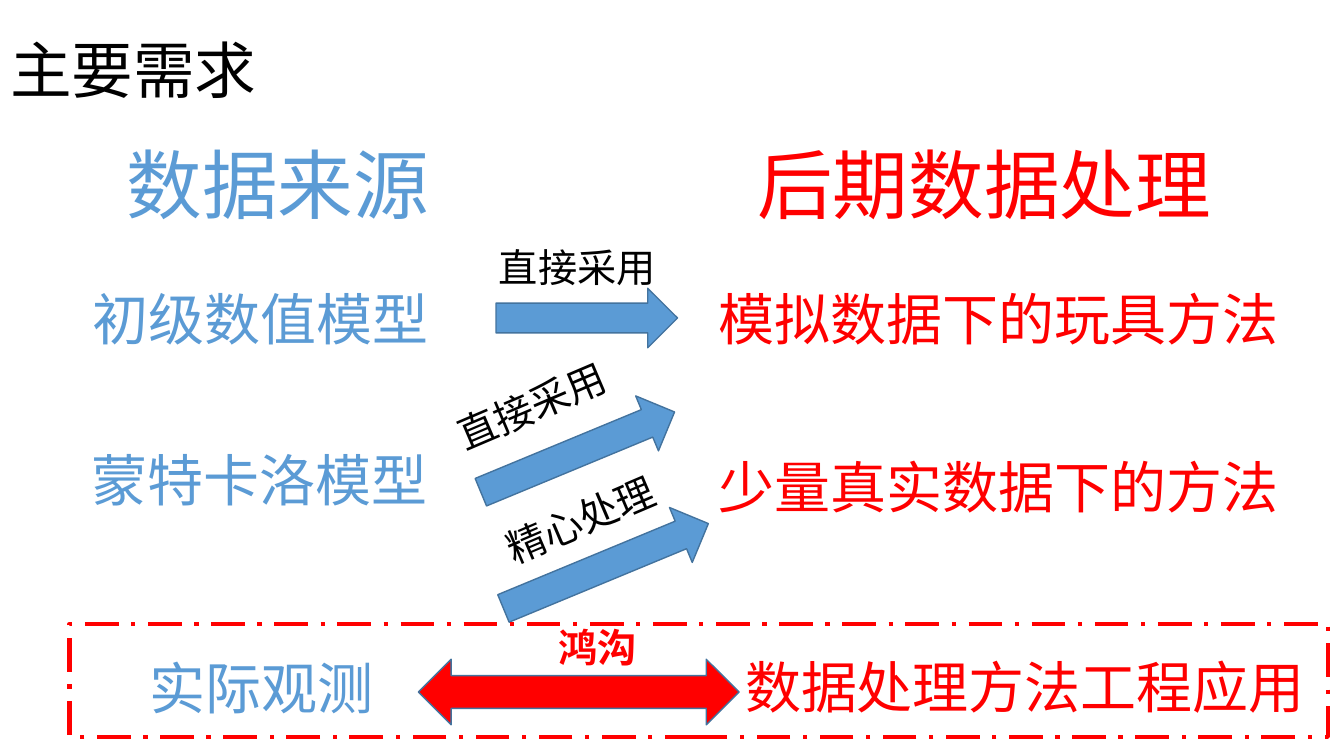
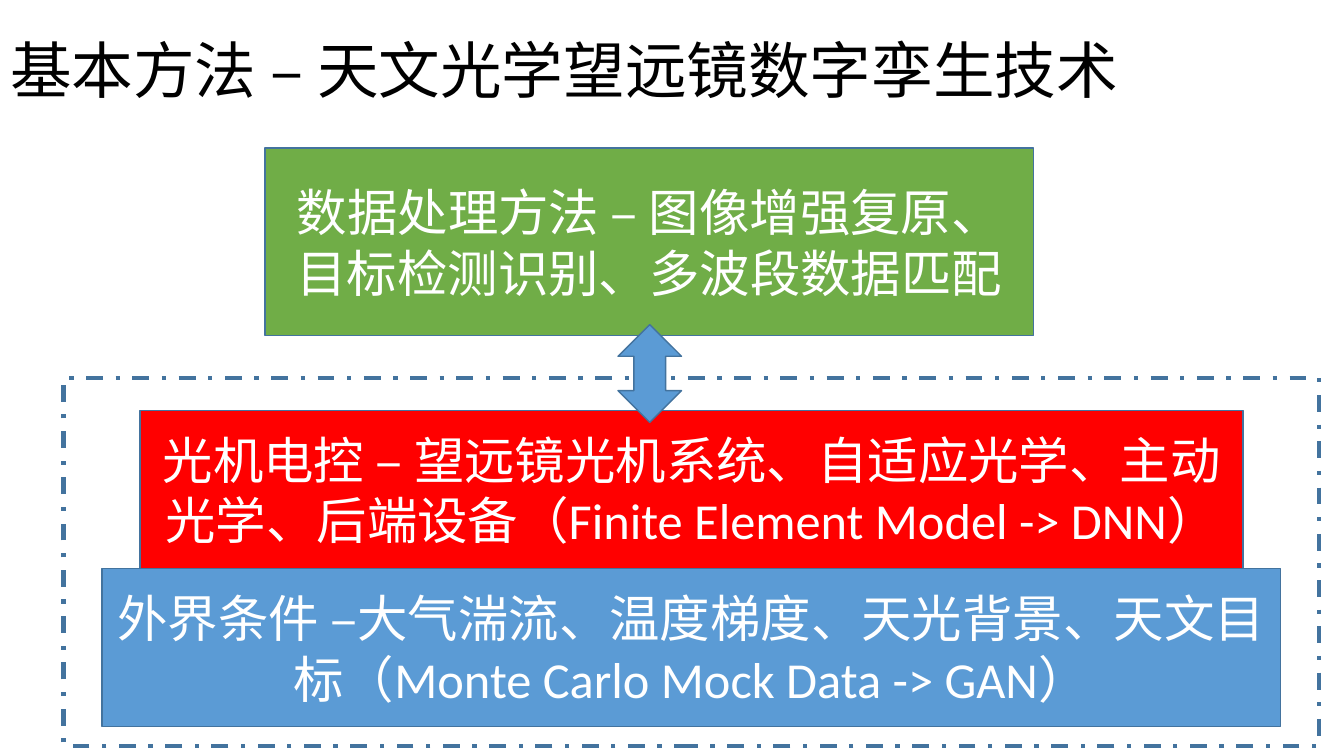
from pptx import Presentation
from pptx.dml.color import RGBColor
from pptx.enum.dml import MSO_LINE
from pptx.enum.shapes import MSO_SHAPE
from pptx.enum.text import MSO_ANCHOR, MSO_AUTO_SIZE, PP_ALIGN
from pptx.util import Emu, Pt

PX = 9144  # 100 px to the inch
SLIDE_SIZE = (1333, 750)
TITLE_BOX = (0, 0, 1289, 145)
TITLE_ONLY = 5
FONT = "Calibri"

BLACK = RGBColor(0x00, 0x00, 0x00)
WHITE = RGBColor(0xFF, 0xFF, 0xFF)
BLUE = RGBColor(0x5B, 0x9B, 0xD5)
DARK_BLUE = RGBColor(0x43, 0x73, 0x9E)
RED = RGBColor(0xFF, 0x00, 0x00)
GREEN = RGBColor(0x70, 0xAD, 0x47)

RECTANGLE = MSO_SHAPE.RECTANGLE
RIGHT_ARROW = MSO_SHAPE.RIGHT_ARROW
LEFT_RIGHT_ARROW = MSO_SHAPE.LEFT_RIGHT_ARROW
UP_DOWN_ARROW = MSO_SHAPE.UP_DOWN_ARROW
LONG_DASH_DOT = MSO_LINE.LONG_DASH_DOT
DASH_DOT = MSO_LINE.DASH_DOT
LEFT = PP_ALIGN.LEFT
CENTER = PP_ALIGN.CENTER
MIDDLE = MSO_ANCHOR.MIDDLE

HEADING_SIZE, ENTRY_SIZE, LABEL_SIZE, LAYER_SIZE, TITLE_SIZE = 54, 40, 28, 36, 44
ARROW_TILT, LABEL_TILT = 337.5, 336.9

# Slide 1: text, box, size, colour
NEEDS_TITLE = "主要需求"
NEEDS = [
    ("数据来源", (114, 132, 323, 101), HEADING_SIZE, BLUE),
    ("后期数据处理", (733, 132, 486, 101), HEADING_SIZE, RED),
    ("初级数值模型", (80, 277, 357, 77), ENTRY_SIZE, BLUE),
    ("蒙特卡洛模型", (79, 437, 357, 77), ENTRY_SIZE, BLUE),
    ("实际观测", (137, 643, 245, 77), ENTRY_SIZE, BLUE),
    ("模拟数据下的玩具方法", (692, 277, 597, 77), ENTRY_SIZE, RED),
    ("少量真实数据下的方法", (700, 444, 581, 77), ENTRY_SIZE, RED),
    ("数据处理方法工程应用", (716, 642, 601, 77), ENTRY_SIZE, RED),
]
# kind, box, fill, rotation
NEED_ARROWS = [
    (RIGHT_ARROW, (492, 286, 180, 59), BLUE, 0),
    (RIGHT_ARROW, (469, 419, 208, 59), BLUE, ARROW_TILT),
    (RIGHT_ARROW, (491, 532, 220, 59), BLUE, ARROW_TILT),
    (LEFT_RIGHT_ARROW, (415, 654, 318, 65), RED, 0),
]
# text, box, colour, bold, rotation
ARROW_LABELS = [
    ("直接采用", (485, 236, 195, 57), BLACK, False, 0),
    ("直接采用", (439, 370, 195, 57), BLACK, False, LABEL_TILT),
    ("精心处理", (487, 483, 195, 57), BLACK, False, LABEL_TILT),
    ("鸿沟", (544, 613, 123, 57), RED, True, 0),
]
GAP_FRAME = (69, 619, 1248, 112)

# Slide 2: text, box, fill
METHOD_TITLE = "基本方法 – 天文光学望远镜数字孪生技术"
LAYERS = [
    ("外界条件 –大气湍流、温度梯度、天光背景、天文目标（Monte Carlo Mock Data -> GAN）",
     (101, 564, 1169, 157), BLUE),
    ("光机电控 – 望远镜光机系统、自适应光学、主动光学、后端设备（Finite Element Model -> DNN）",
     (139, 407, 1094, 157), RED),
    ("数据处理方法 – 图像增强复原、目标检测识别、多波段数据匹配",
     (263, 147, 762, 186), GREEN),
]
TWIN_FRAME = (63, 375, 1245, 365)
LAYER_ARROW = (613, 322, 63, 97)


def emu(box):
    return [Emu(length * PX) for length in box]


def write(shape, text, size, color, align=CENTER, bold=False):
    paragraph = shape.text_frame.paragraphs[0]
    paragraph.text = text
    paragraph.alignment = align
    font = paragraph.runs[0].font
    font.name, font.size, font.bold = FONT, Pt(size), bold
    font.color.rgb = color
    return paragraph


def add_titled_slide(presentation, text):
    slide = presentation.slides.add_slide(presentation.slide_layouts[TITLE_ONLY])
    title = slide.shapes.title
    title.left, title.top, title.width, title.height = emu(TITLE_BOX)
    title.text_frame.auto_size = MSO_AUTO_SIZE.NONE
    title.text_frame.vertical_anchor = MIDDLE
    write(title, text, TITLE_SIZE, BLACK, LEFT).line_spacing = 0.9
    return slide


def add_text(slide, text, box, size, color, align=CENTER, bold=False, rotation=0, wrap=False):
    shape = slide.shapes.add_textbox(*emu(box))
    shape.rotation = rotation
    shape.text_frame.word_wrap = wrap
    shape.text_frame.auto_size = MSO_AUTO_SIZE.SHAPE_TO_FIT_TEXT
    write(shape, text, size, color, align, bold)


def add_block(slide, kind, box, fill, rotation=0):
    shape = slide.shapes.add_shape(kind, *emu(box))
    shape.shadow.inherit = False
    shape.rotation = rotation
    shape.fill.solid()
    shape.fill.fore_color.rgb = fill
    shape.line.color.rgb = DARK_BLUE
    shape.line.width = Pt(1)
    return shape


def add_frame(slide, box, color, dash):
    frame = slide.shapes.add_shape(RECTANGLE, *emu(box))
    frame.shadow.inherit = False
    frame.fill.background()
    frame.line.color.rgb = color
    frame.line.width = Pt(3)
    frame.line.dash_style = dash


def build_needs(presentation):
    slide = add_titled_slide(presentation, NEEDS_TITLE)
    for need in NEEDS:
        add_text(slide, *need)
    for arrow in NEED_ARROWS:
        add_block(slide, *arrow)
    for text, box, color, bold, rotation in ARROW_LABELS:
        add_text(slide, text, box, LABEL_SIZE, color, LEFT, bold, rotation, wrap=True)
    add_frame(slide, GAP_FRAME, RED, LONG_DASH_DOT)


def build_method(presentation):
    slide = add_titled_slide(presentation, METHOD_TITLE)
    for text, box, fill in LAYERS:
        layer = add_block(slide, RECTANGLE, box, fill)
        layer.text_frame.word_wrap = True
        layer.text_frame.vertical_anchor = MIDDLE
        write(layer, text, LAYER_SIZE, WHITE)
    add_frame(slide, TWIN_FRAME, DARK_BLUE, DASH_DOT)
    add_block(slide, UP_DOWN_ARROW, LAYER_ARROW, BLUE)


def main():
    presentation = Presentation()
    presentation.slide_width, presentation.slide_height = emu(SLIDE_SIZE)
    build_needs(presentation)
    build_method(presentation)
    presentation.save("out.pptx")


if __name__ == "__main__":
    main()
